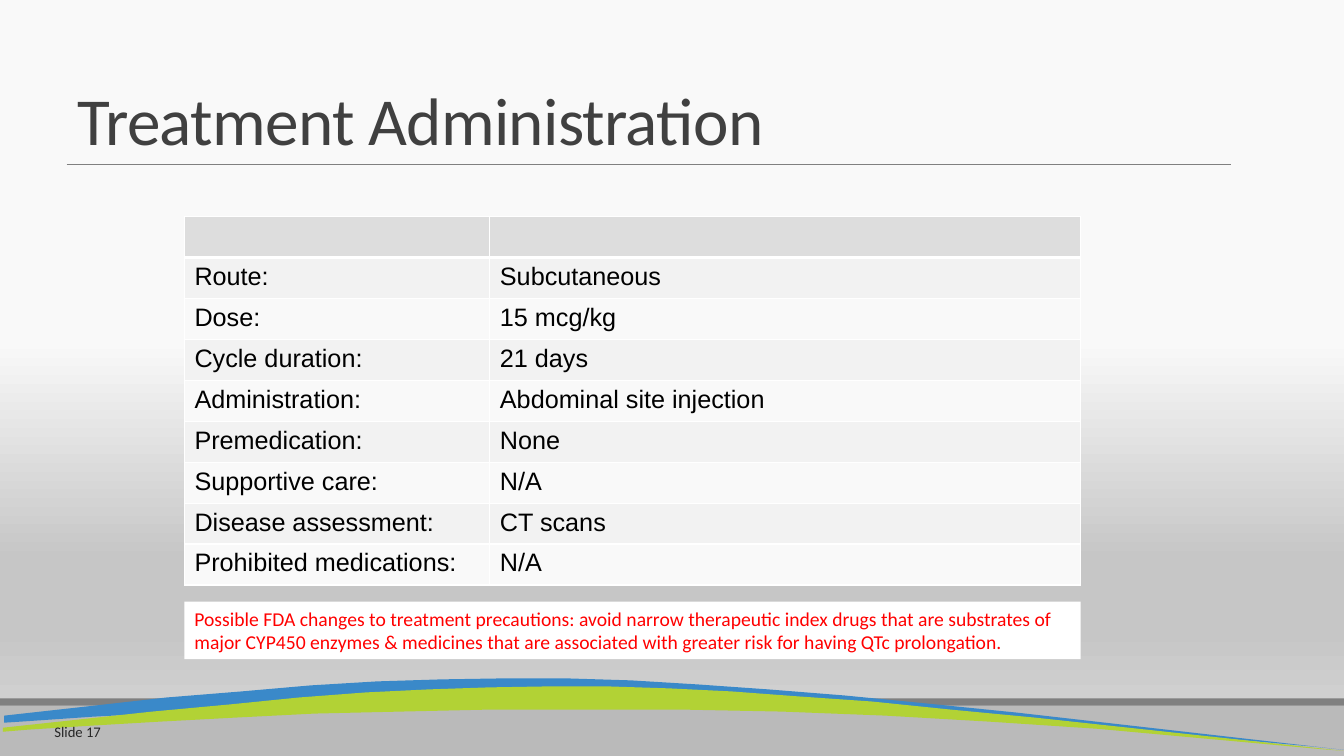
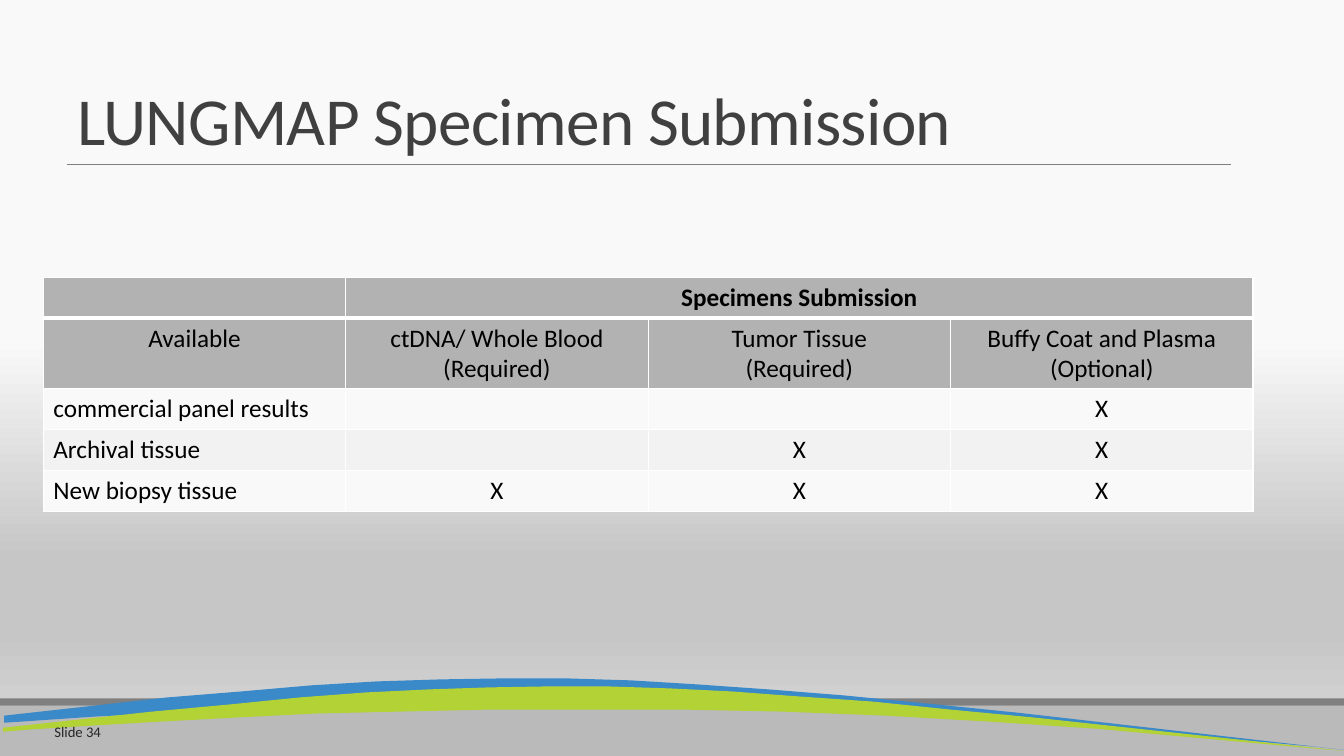
from lxml import etree
from pptx import Presentation
from pptx.dml.color import RGBColor
from pptx.enum.shapes import MSO_CONNECTOR, MSO_SHAPE
from pptx.enum.text import MSO_ANCHOR, PP_ALIGN
from pptx.oxml.ns import qn
from pptx.util import Inches, Pt

LEFT, CENTER, RIGHT = PP_ALIGN.LEFT, PP_ALIGN.CENTER, PP_ALIGN.RIGHT
TOP, MIDDLE, BOTTOM = MSO_ANCHOR.TOP, MSO_ANCHOR.MIDDLE, MSO_ANCHOR.BOTTOM
RECT, STRAIGHT = MSO_SHAPE.RECTANGLE, MSO_CONNECTOR.STRAIGHT

# The slide is a grid of square cells, a tenth of an inch each
CELL = Inches(0.1)
COLS, ROWS = 133.33, 75

# Colours
WHITE = RGBColor(0xFF, 0xFF, 0xFF)
BLACK = RGBColor(0x00, 0x00, 0x00)
RED = RGBColor(0xFF, 0x00, 0x00)
INK = RGBColor(0x40, 0x40, 0x40)
DARK = RGBColor(0x26, 0x26, 0x26)
GRAY = RGBColor(0x80, 0x80, 0x80)
FLOOR = RGBColor(0xBA, 0xBA, 0xBA)
BLUE = RGBColor(0x3A, 0x89, 0xC9)
GREEN = RGBColor(0xB2, 0xD2, 0x35)
PALE = RGBColor(0xDD, 0xDD, 0xDD)
STEEL = RGBColor(0xB2, 0xB2, 0xB2)
BANDS = RGBColor(0xF9, 0xF9, 0xF9), RGBColor(0xF2, 0xF2, 0xF2)
SHADES = [(45, BANDS[0]), (74, RGBColor(0xC6, 0xC6, 0xC6)),
          (83, RGBColor(0xC6, 0xC6, 0xC6)), (100, RGBColor(0xD9, 0xD9, 0xD9))]

SANS, PLAIN = "Calibri", "Arial"

# Wave outlines: along the crest to the right, back along the belly
BLUE_WAVE = [
    (0.4, 71), (8.5, 70.1), (16.5, 69.2), (23.9, 68.6), (30.8, 68), (37.4, 67.6),
    (43.8, 67.4), (50, 67.3), (56.2, 67.3), (62.6, 67.5), (69.2, 67.9),
    (76.3, 68.4), (83.8, 69), (92, 69.8), (100.9, 70.7), (COLS, 74.4),
    (130.6, 74.1), (107.4, 72), (96.2, 71.1), (85.2, 70.5), (74.4, 70.1),
    (63.9, 69.9), (53.7, 69.8), (43.9, 69.9), (34.5, 70.1), (25.6, 70.3),
    (17.1, 70.7), (9.3, 71.1), (2, 71.6), (0.4, 71.7)]
GREEN_WAVE = [
    (0.3, 72.2), (6.8, 71.5), (15.1, 70.6), (22.7, 69.9), (29.7, 69.2),
    (36.3, 68.7), (42.5, 68.4), (48.5, 68.2), (54.4, 68.1), (60.3, 68.1),
    (66.4, 68.3), (72.6, 68.6), (79.3, 69.1), (86.5, 69.6), (94.3, 70.4),
    (102.7, 71.2), (COLS, 74.5), (130.8, 74.3), (108.8, 72.3), (98.2, 71.6),
    (87.8, 71), (77.6, 70.6), (67.6, 70.4), (57.9, 70.4), (48.6, 70.4),
    (39.7, 70.6), (31.2, 70.8), (23.3, 71.2), (15.8, 71.6), (9, 72),
    (2.7, 72.4), (0.3, 72.6)]


def grid(*cells):
    return [round(n * CELL) for n in cells]


def write(frame, text, size, color, align=LEFT, font=SANS, bold=False):
    frame.text = text
    for para in frame.paragraphs:
        para.alignment = align
        for run in para.runs:
            run.font.name = font
            run.font.size = Pt(size)
            run.font.bold = bold
            run.font.color.rgb = color


def add_text(slide, place, text, size, color, align=LEFT, anchor=TOP):
    box = slide.shapes.add_textbox(*grid(*place))
    box.text_frame.word_wrap = True
    box.text_frame.vertical_anchor = anchor
    write(box.text_frame, text, size, color, align)
    return box


def paint(shape, color):
    shape.shadow.inherit = False
    shape.fill.solid()
    shape.fill.fore_color.rgb = color
    shape.line.fill.background()


def add_band(slide, top, height, color):
    paint(slide.shapes.add_shape(RECT, *grid(0, top, COLS, height)), color)


def add_wave(slide, points, color):
    start, *rest = [grid(*point) for point in points]
    pen = slide.shapes.build_freeform(*start, scale=1.0)
    pen.add_line_segments(rest, close=True)
    paint(pen.convert_to_shape(), color)


def add_rule(slide, left, right, top):
    rule = slide.shapes.add_connector(STRAIGHT, *grid(left, top, right, top))
    rule.line.color.rgb = GRAY
    rule.line.width = Pt(0.5)
    etree.SubElement(rule._element.spPr, qn("a:effectLst"))


def add_fade(slide):
    fill = slide.background.fill
    fill.gradient()
    fill.gradient_angle = 270
    stops = slide._element.find(".//" + qn("a:gsLst"))
    for stop in list(stops):
        stops.remove(stop)
    for spot, color in SHADES:
        stop = etree.SubElement(stops, qn("a:gs"), pos=str(spot * 1000))
        etree.SubElement(stop, qn("a:srgbClr"), val=str(color))


def add_slide(deck, title, number):
    """Add a slide with the shared backdrop, title and footer."""
    slide = deck.slides.add_slide(deck.slide_layouts[6])
    add_fade(slide)
    add_band(slide, 70, 5, FLOOR)
    add_band(slide, 69.3, 0.7, GRAY)
    add_rule(slide, 6.6, 122.1, 16.3)
    add_wave(slide, BLUE_WAVE, BLUE)
    add_wave(slide, GREEN_WAVE, GREEN)
    box = add_text(slide, (6.7, 0.4, 115.3, 15.9), title, 48, INK, anchor=BOTTOM)
    para = box.text_frame.paragraphs[0]
    para.line_spacing = 0.85
    para.runs[0].font._element.set("spc", "-50")
    add_text(slide, (0.7, 70.6, 10.3, 4), f"Slide {number}", 10.5, DARK, RIGHT, MIDDLE)
    return slide


def edge(cell, row):
    # The rule under the first row is the thick one
    widths = {"L": 1, "R": 1, "T": 3 if row == 1 else 1, "B": 3 if row == 0 else 1}
    props = cell._tc.get_or_add_tcPr()
    for side, width in widths.items():
        line = etree.SubElement(props, qn("a:ln" + side), w=str(Pt(width)))
        fill = etree.SubElement(line, qn("a:solidFill"))
        etree.SubElement(fill, qn("a:srgbClr"), val=str(WHITE))


def add_grid(slide, left, top, widths, heights, data, heads, shade, font, align):
    """Add a table whose first rows (heads) share one shade."""
    size = sum(widths), sum(heights)
    frame = slide.shapes.add_table(len(heights), len(widths), *grid(left, top, *size))
    table = frame.table
    table.first_row = table.horz_banding = False
    for column, width in zip(table.columns, grid(*widths)):
        column.width = width
    for line, height in zip(table.rows, grid(*heights)):
        line.height = height
    for r, texts in enumerate(data):
        for c, text in enumerate(texts):
            cell = table.cell(r, c)
            edge(cell, r)
            cell.fill.solid()
            cell.fill.fore_color.rgb = shade if r < heads else BANDS[r % 2]
            side = LEFT if c == 0 and r >= heads else align
            write(cell.text_frame, text, 18, BLACK, side, font, bold=r == 0)
    return table


def main():
    deck = Presentation()
    deck.slide_width, deck.slide_height = grid(COLS, ROWS)

    # Treatment
    slide = add_slide(deck, "Treatment Administration", 17)
    data = [
        ("", ""),
        ("Route:", "Subcutaneous"),
        ("Dose:", "15 mcg/kg"),
        ("Cycle duration:", "21 days"),
        ("Administration:", "Abdominal site injection"),
        ("Premedication:", "None"),
        ("Supportive care:", "N/A"),
        ("Disease assessment:", "CT scans"),
        ("Prohibited medications:", "N/A")]
    add_grid(slide, 18.3, 21.5, [30.3, 58.6], [4.06] * len(data), data,
             1, PALE, PLAIN, LEFT)
    note = add_text(
        slide, (18.3, 59.7, 88.9, 5.7),
        "Possible FDA changes to treatment precautions: avoid narrow therapeutic "
        "index drugs that are substrates of major CYP450 enzymes & medicines that "
        "are associated with greater risk for having QTc prolongation.", 14, RED)
    note.fill.solid()
    note.fill.fore_color.rgb = WHITE

    # Specimens
    slide = add_slide(deck, "LUNGMAP Specimen Submission", 34)
    data = [
        ("", "Specimens Submission", "", ""),
        ("Available", "ctDNA/ Whole Blood\n(Required)", "Tumor Tissue\n(Required)",
         "Buffy Coat and Plasma (Optional)"),
        ("commercial panel results", "", "", "X"),
        ("Archival tissue", "", "X", "X"),
        ("New biopsy tissue", "X", "X", "X")]
    table = add_grid(slide, 4.3, 27.5, [30] * 4, [4.06, 7] + [4.06] * 3, data,
                     2, STEEL, SANS, CENTER)
    table.cell(0, 1).merge(table.cell(0, 3))

    deck.save("out.pptx")


if __name__ == "__main__":
    main()
